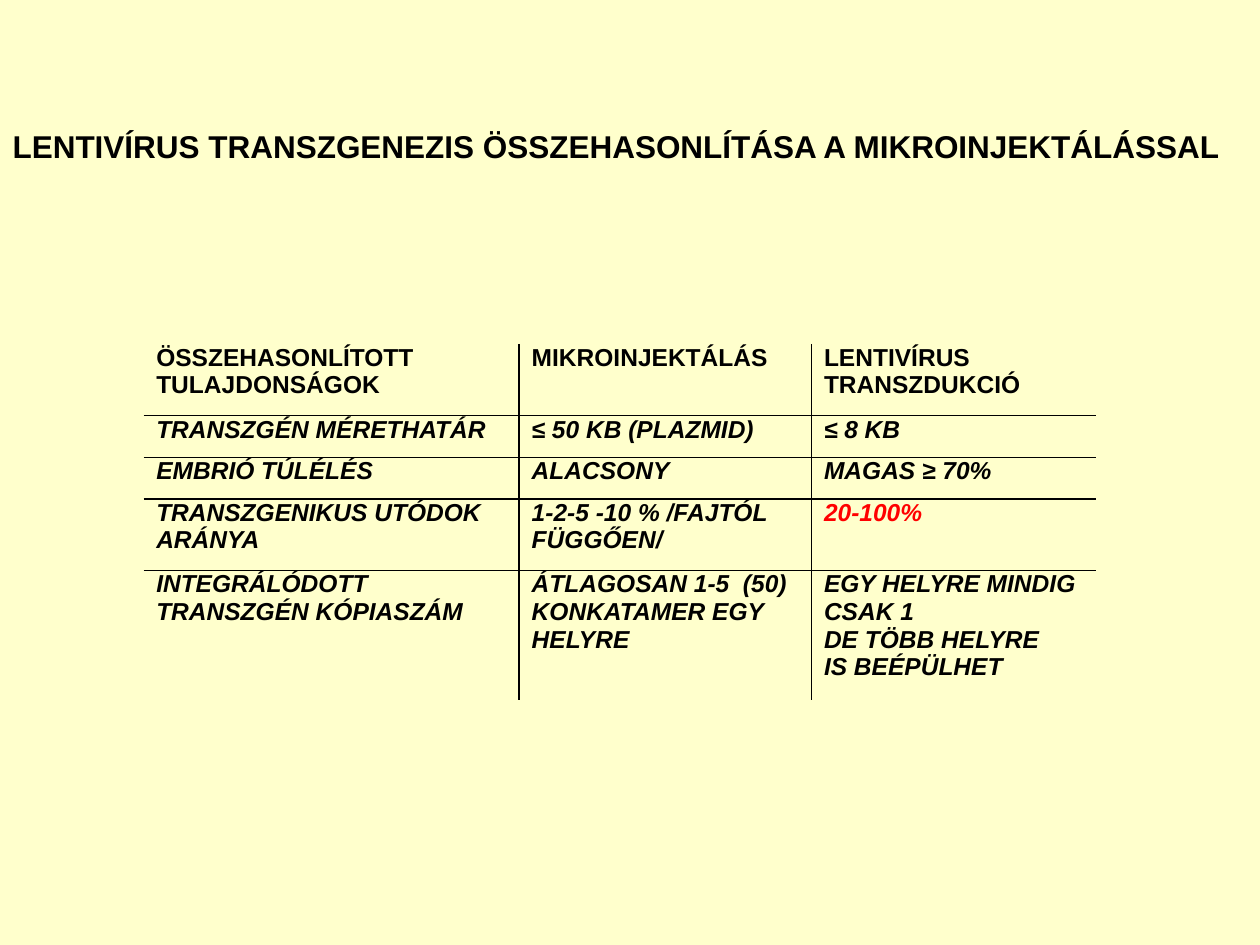
from dataclasses import dataclass

from lxml.etree import SubElement
from pptx import Presentation
from pptx.dml.color import RGBColor
from pptx.enum.text import MSO_ANCHOR, PP_ALIGN
from pptx.oxml.ns import qn
from pptx.util import Inches, Pt


@dataclass(frozen=True)
class Theme:
    font: str = "Arial"
    paper: RGBColor = RGBColor(0xFF, 0xFF, 0xCC)
    ink: RGBColor = RGBColor(0, 0, 0)
    highlight: RGBColor = RGBColor(0xFF, 0, 0)
    title_size: int = 18
    table_size: int = 14
    rule_width: int = 1


THEME = Theme()

TITLE = "LENTIVÍRUS TRANSZGENEZIS ÖSSZEHASONLÍTÁSA A MIKROINJEKTÁLÁSSAL"
COLUMN_WIDTHS = (2.98, 2.32, 2.26)
ROW_HEIGHTS = (0.57, 0.33, 0.33, 0.57, 1.03)
HIGHLIGHTED = "20-100%"

# \n starts a paragraph, \v breaks a line
COMPARISON = (
    ("ÖSSZEHASONLÍTOTT TULAJDONSÁGOK", "MIKROINJEKTÁLÁS", "LENTIVÍRUS TRANSZDUKCIÓ"),
    ("TRANSZGÉN MÉRETHATÁR", "≤ 50 KB (PLAZMID)", "≤ 8 KB"),
    ("EMBRIÓ TÚLÉLÉS", "ALACSONY", "MAGAS ≥ 70%"),
    ("TRANSZGENIKUS UTÓDOK ARÁNYA", "1-2-5 -10 % /FAJTÓL FÜGGŐEN/", HIGHLIGHTED),
    ("INTEGRÁLÓDOTT\nTRANSZGÉN KÓPIASZÁM",
     "ÁTLAGOSAN 1-5  (50) KONKATAMER EGY HELYRE",
     "EGY HELYRE MINDIG\nCSAK 1\nDE TÖBB HELYRE\vIS BEÉPÜLHET"),
)


def style_font(font, size, color=THEME.ink, italic=False):
    font.name = THEME.font
    font.size = Pt(size)
    font.bold = True
    font.italic = italic
    font.color.rgb = color


def add_title(slide):
    title = slide.shapes.title
    title.left, title.top = Inches(0.09), Inches(0.28)
    title.width, title.height = Inches(9.83), Inches(1.18)
    frame = title.text_frame
    frame.text = TITLE
    frame.vertical_anchor = MSO_ANCHOR.TOP
    frame.margin_left = Inches(0.01)
    frame.margin_top = Inches(0.73)
    frame.margin_right = frame.margin_bottom = 0
    heading = frame.paragraphs[0]
    heading.alignment = PP_ALIGN.LEFT
    style_font(heading.font, THEME.title_size)


def rule_cell(cell, ruled_edges):
    """Draw the named edges of a cell and clear the others."""
    properties = cell._tc.get_or_add_tcPr()
    for edge in "LRTB":
        line = SubElement(properties, qn(f"a:ln{edge}"), w=str(Pt(THEME.rule_width)))
        if edge in ruled_edges:
            fill = SubElement(line, qn("a:solidFill"))
            SubElement(fill, qn("a:srgbClr"), val=str(THEME.ink))
        else:
            SubElement(line, qn("a:noFill"))


def fill_cell(cell, text, italic):
    cell.text = text
    cell.margin_left = Inches(0.1)
    cell.margin_top = cell.margin_right = cell.margin_bottom = 0
    cell.fill.solid()
    cell.fill.fore_color.rgb = THEME.paper
    color = THEME.highlight if text == HIGHLIGHTED else THEME.ink
    for paragraph in cell.text_frame.paragraphs:
        style_font(paragraph.font, THEME.table_size, color, italic)


def add_comparison(slide):
    rows, columns = len(ROW_HEIGHTS), len(COLUMN_WIDTHS)
    table = slide.shapes.add_table(
        rows, columns, Inches(1.14), Inches(2.73),
        Inches(sum(COLUMN_WIDTHS)), Inches(sum(ROW_HEIGHTS))).table
    table.first_row = table.horz_banding = False
    for column, width in zip(table.columns, COLUMN_WIDTHS):
        column.width = Inches(width)
    for row, height in zip(table.rows, ROW_HEIGHTS):
        row.height = Inches(height)

    for r, texts in enumerate(COMPARISON):
        for c, text in enumerate(texts):
            # Only inner edges are ruled
            inner = {"L": c > 0, "R": c < columns - 1, "T": r > 0, "B": r < rows - 1}
            cell = table.cell(r, c)
            rule_cell(cell, [edge for edge, ruled in inner.items() if ruled])
            fill_cell(cell, text, italic=r > 0)


def main():
    deck = Presentation()
    deck.slide_width, deck.slide_height = Inches(10), Inches(7.5)
    slide = deck.slides.add_slide(deck.slide_layouts[5])

    # Background
    slide.background.fill.solid()
    slide.background.fill.fore_color.rgb = THEME.paper

    # Content
    add_title(slide)
    add_comparison(slide)
    deck.save("out.pptx")


if __name__ == "__main__":
    main()
